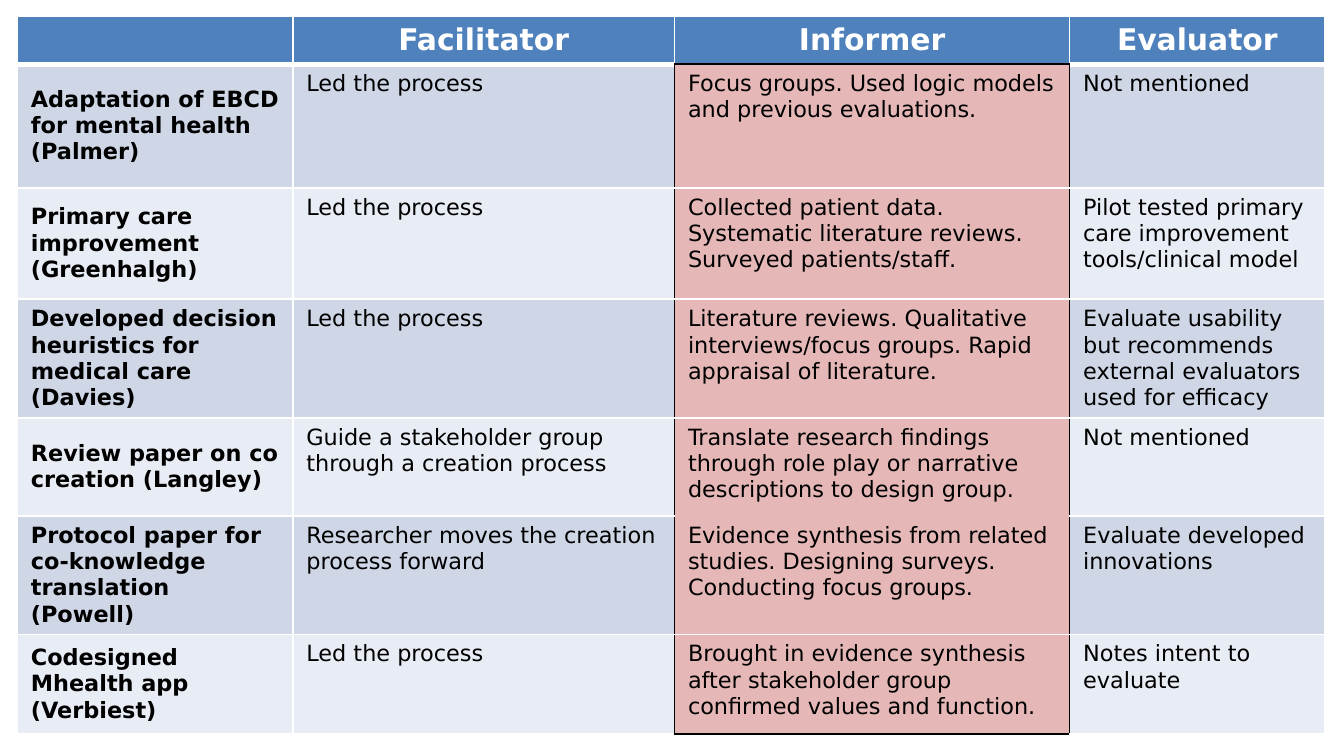
from lxml.etree import SubElement
from pptx import Presentation
from pptx.dml.color import RGBColor
from pptx.enum.text import MSO_ANCHOR, PP_ALIGN
from pptx.oxml.ns import qn
from pptx.util import Inches, Pt

FONT = "DejaVu Sans"
HEADER_SIZE = 16
BODY_SIZE = 12
WHITE = RGBColor(0xFF, 0xFF, 0xFF)
BLACK = RGBColor(0x00, 0x00, 0x00)
BLUE = RGBColor(0x4F, 0x81, 0xBD)
PINK = RGBColor(0xE5, 0xB8, 0xB7)
BANDS = [RGBColor(0xE8, 0xEC, 0xF4), RGBColor(0xCF, 0xD7, 0xE7)]

HEADERS = ["", "Facilitator", "Informer", "Evaluator"]
STUDIES = [
    ["Adaptation of EBCD for mental health (Palmer)", "Led the process",
     "Focus groups. Used logic models and previous evaluations.",
     "Not mentioned"],
    ["Primary care improvement (Greenhalgh)", "Led the process",
     "Collected patient data. Systematic literature reviews. Surveyed patients/staff.",
     "Pilot tested primary care improvement tools/clinical model"],
    ["Developed decision heuristics for medical care (Davies)", "Led the process",
     "Literature reviews. Qualitative interviews/focus groups. Rapid appraisal of literature.",
     "Evaluate usability but recommends external evaluators used for efficacy"],
    ["Review paper on co creation (Langley)",
     "Guide a stakeholder group through a creation process",
     "Translate research findings through role play or narrative descriptions to design group.",
     "Not mentioned"],
    ["Protocol paper for co-knowledge translation (Powell)",
     "Researcher moves the creation process forward",
     "Evidence synthesis from related studies. Designing surveys. Conducting focus groups.",
     "Evaluate developed innovations"],
    ["Codesigned Mhealth app (Verbiest)", "Led the process",
     "Brought in evidence synthesis after stakeholder group confirmed values and function.",
     "Notes intent to evaluate"],
]
ROWS = [HEADERS] + STUDIES
COLUMN_WIDTHS = [2.05, 2.84, 2.94, 1.9]
ROW_HEIGHTS = [0.32, 0.92, 0.83, 0.73, 0.73, 0.86, 0.74]
INFORMER = 2
LAST_ROW = len(ROWS) - 1
OPEN_EDGE = 4


def cell_borders(row, column):
    borders = {side: (WHITE, 1) for side in "LRTB"}
    if row == 0:
        borders["B"] = (BLACK, 1) if column == INFORMER else (WHITE, 3)
        return borders
    if column >= INFORMER:
        borders["L"] = (BLACK, 1)
    if column in (INFORMER - 1, INFORMER):
        borders["R"] = (BLACK, 1)
    if column == INFORMER:
        if row == 1:
            borders["T"] = (BLACK, 1)
        if row == LAST_ROW:
            borders["B"] = (BLACK, 1)
        if row == OPEN_EDGE:
            borders["B"] = None
        if row == OPEN_EDGE + 1:
            borders["T"] = None
    return borders


def draw_borders(cell, borders):
    properties = cell._tc.get_or_add_tcPr()
    for side, border in borders.items():
        line = SubElement(properties, qn(f"a:ln{side}"))
        if border is None:
            SubElement(line, qn("a:noFill"))
            continue
        color, width = border
        line.set("w", str(Pt(width)))
        fill = SubElement(line, qn("a:solidFill"))
        SubElement(fill, qn("a:srgbClr")).set("val", str(color))


def cell_fill(row, column):
    if row == 0:
        return BLUE
    return PINK if column == INFORMER else BANDS[row % 2]


def write_cell(cell, text, row, column):
    header = row == 0
    middle = header or column == 0
    draw_borders(cell, cell_borders(row, column))
    cell.fill.solid()
    cell.fill.fore_color.rgb = cell_fill(row, column)
    cell.vertical_anchor = MSO_ANCHOR.MIDDLE if middle else MSO_ANCHOR.TOP
    cell.text_frame.text = text
    para = cell.text_frame.paragraphs[0]
    para.alignment = PP_ALIGN.CENTER if header else PP_ALIGN.LEFT
    for span in para.runs:
        span.font.name = FONT
        span.font.size = Pt(HEADER_SIZE if header else BODY_SIZE)
        span.font.bold = middle
        span.font.color.rgb = WHITE if header else BLACK
    if not text:
        SubElement(para._p, qn("a:endParaRPr")).set("sz", str(BODY_SIZE * 100))


deck = Presentation()
deck.slide_width = Inches(10)
deck.slide_height = deck.slide_width * 9 // 16
page = deck.slides.add_slide(deck.slide_layouts[6])
table = page.shapes.add_table(
    len(ROWS), len(HEADERS), Inches(0.13), Inches(0.12),
    Inches(sum(COLUMN_WIDTHS)), Inches(sum(ROW_HEIGHTS))).table
table.horz_banding = False

for column, width in zip(table.columns, COLUMN_WIDTHS):
    column.width = Inches(width)
for row, height in zip(table.rows, ROW_HEIGHTS):
    row.height = Inches(height)
for row_index, texts in enumerate(ROWS):
    for column_index, text in enumerate(texts):
        write_cell(table.cell(row_index, column_index), text, row_index, column_index)

deck.save("out.pptx")
